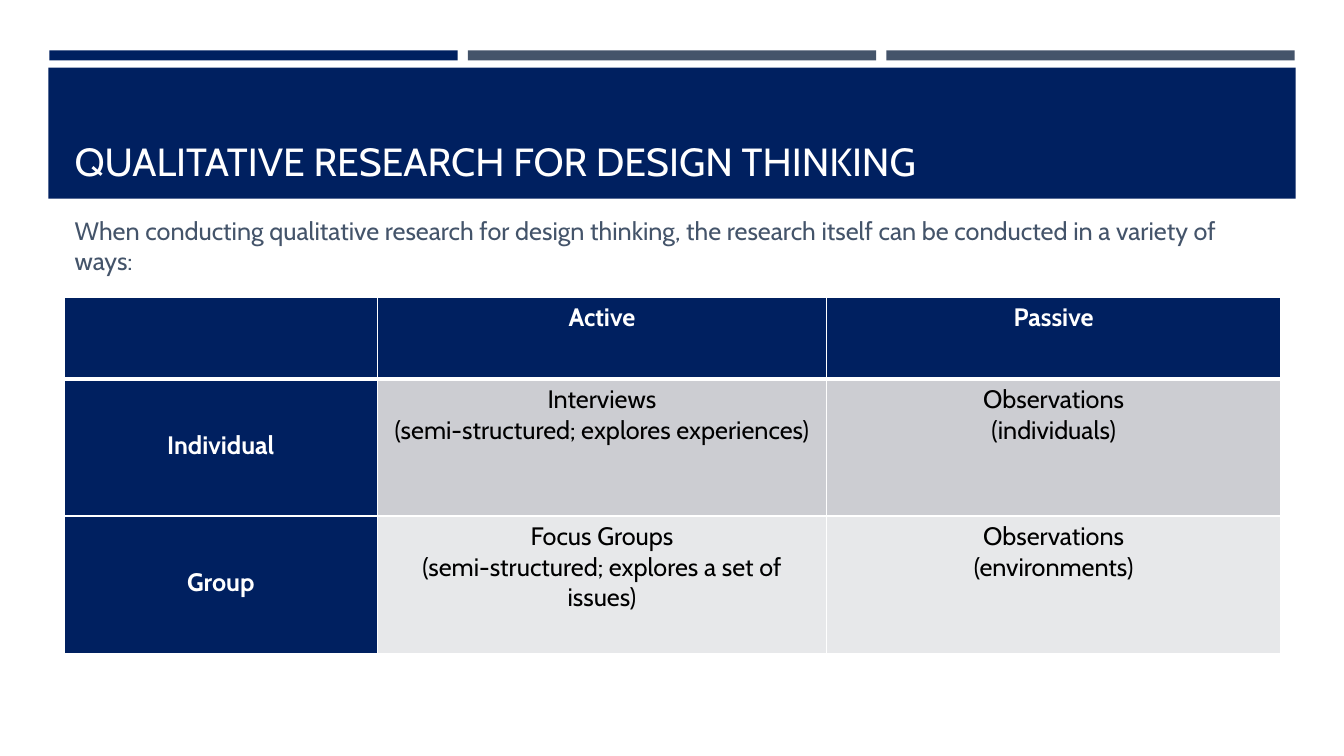
import pptx
import pptx.util
import pptx.dml.color
import pptx.enum.shapes
import pptx.enum.text
import pptx.oxml
import pptx.oxml.ns

Inches, Pt = pptx.util.Inches, pptx.util.Pt
RGBColor = pptx.dml.color.RGBColor
ALIGN = pptx.enum.text.PP_ALIGN
ANCHOR = pptx.enum.text.MSO_ANCHOR

# Content
TITLE = "QUALITATIVE RESEARCH FOR DESIGN THINKING"
INTRO = ("When conducting qualitative research for design thinking, "
         "the research itself can be conducted in a variety of ways:")
ROWS = [
    ["", "Active", "Passive"],
    ["Individual",
     "Interviews\n(semi-structured; explores experiences)",
     "Observations\n(individuals)"],
    ["Group",
     "Focus Groups\n(semi-structured; explores a set of issues)",
     "Observations\n(environments)"],
]

# Style
FONT = "Cabin"
NAVY = RGBColor(0x00, 0x20, 0x60)
SLATE = RGBColor(0x44, 0x54, 0x6A)
WHITE = RGBColor(0xFF, 0xFF, 0xFF)
BLACK = RGBColor(0x00, 0x00, 0x00)
BANDS = [NAVY, RGBColor(0xCC, 0xCD, 0xD2), RGBColor(0xE7, 0xE8, 0xEA)]

# Layout
LEFT, WIDTH = 0.64, 12.06
COLS = [3.1, 4.46, 4.5]
HEIGHTS = [0.81, 1.36, 1.36]
STRIPS = [NAVY, SLATE, SLATE]
STRIP_LEFT, STRIP_WIDTH, STRIP_STEP = 0.49, 4.05, 4.15


def add_bar(slide, left, top, width, height, color):
    bar = slide.shapes.add_shape(
        pptx.enum.shapes.MSO_SHAPE.RECTANGLE,
        Inches(left), Inches(top), Inches(width), Inches(height))
    bar.shadow.inherit = False
    bar.fill.solid()
    bar.fill.fore_color.rgb = color
    bar.line.fill.background()


def style(para, size, color, bold=False):
    for run in para.runs:
        run.font.name = FONT
        run.font.size = Pt(size)
        run.font.bold = bold
        run.font.color.rgb = color


def fill_holder(holder, text, top, anchor, size, color):
    holder.left, holder.top = Inches(LEFT), Inches(top)
    holder.width, holder.height = Inches(WIDTH), Inches(1.11)
    frame = holder.text_frame
    frame.text = text
    frame.word_wrap = True
    frame.auto_size = pptx.enum.text.MSO_AUTO_SIZE.NONE
    frame.vertical_anchor = anchor
    para = frame.paragraphs[0]
    para.alignment = ALIGN.LEFT
    style(para, size, color)
    return para


def add_borders(cell, widths):
    props = cell._tc.get_or_add_tcPr()
    for spot, (side, points) in enumerate(widths.items()):
        line = pptx.oxml.parse_xml(
            f'<a:ln{side} {pptx.oxml.ns.nsdecls("a")} w="{Pt(points)}">'
            f'<a:solidFill><a:srgbClr val="{WHITE}"/></a:solidFill>'
            f'</a:ln{side}>')
        props.insert(spot, line)


def fill_cell(cell, text, row, col):
    head = row == 0 or col == 0
    cell.fill.solid()
    cell.fill.fore_color.rgb = NAVY if head else BANDS[row]
    cell.text_frame.text = text
    for para in cell.text_frame.paragraphs:
        para.alignment = ALIGN.CENTER
        if col == 0 and row > 0:
            para.line_spacing = 2.5
        style(para, 18, WHITE if head else BLACK, head)
    # A thick rule parts the header from the rows below
    add_borders(cell, {"L": 1, "R": 1, "T": 3 if row == 1 else 1,
                       "B": 3 if row == 0 else 1})


def main():
    deck = pptx.Presentation()
    deck.slide_width, deck.slide_height = Inches(13.33), Inches(7.5)
    slide = deck.slides.add_slide(deck.slide_layouts[1])
    title, body = slide.placeholders

    # Top strips and title band
    for i, color in enumerate(STRIPS):
        add_bar(slide, STRIP_LEFT + i * STRIP_STEP, 0.5,
                STRIP_WIDTH, 0.1, color)
    add_bar(slide, 0.48, 0.67, 12.37, 1.3, NAVY)

    # Title and intro, raised above the band
    fill_holder(title, TITLE, 0.77, ANCHOR.BOTTOM, 28, WHITE)
    intro = fill_holder(body, INTRO, 1.88, ANCHOR.MIDDLE, 18, SLATE)
    intro.space_before, intro.space_after = Pt(3.6), Pt(6)
    props = intro._p.get_or_add_pPr()
    props.set("marL", "0")
    props.set("indent", "0")
    props.append(pptx.oxml.parse_xml(
        f'<a:buNone {pptx.oxml.ns.nsdecls("a")}/>'))
    for holder in (title, body):
        slide.shapes._spTree.append(holder._element)

    # Research table
    table = slide.shapes.add_table(
        len(ROWS), len(COLS), Inches(LEFT), Inches(2.95),
        Inches(sum(COLS)), Inches(sum(HEIGHTS))).table
    for col, width in enumerate(COLS):
        table.columns[col].width = Inches(width)
    for row, texts in enumerate(ROWS):
        table.rows[row].height = Inches(HEIGHTS[row])
        for col, text in enumerate(texts):
            fill_cell(table.cell(row, col), text, row, col)

    deck.save("out.pptx")


if __name__ == "__main__":
    main()
